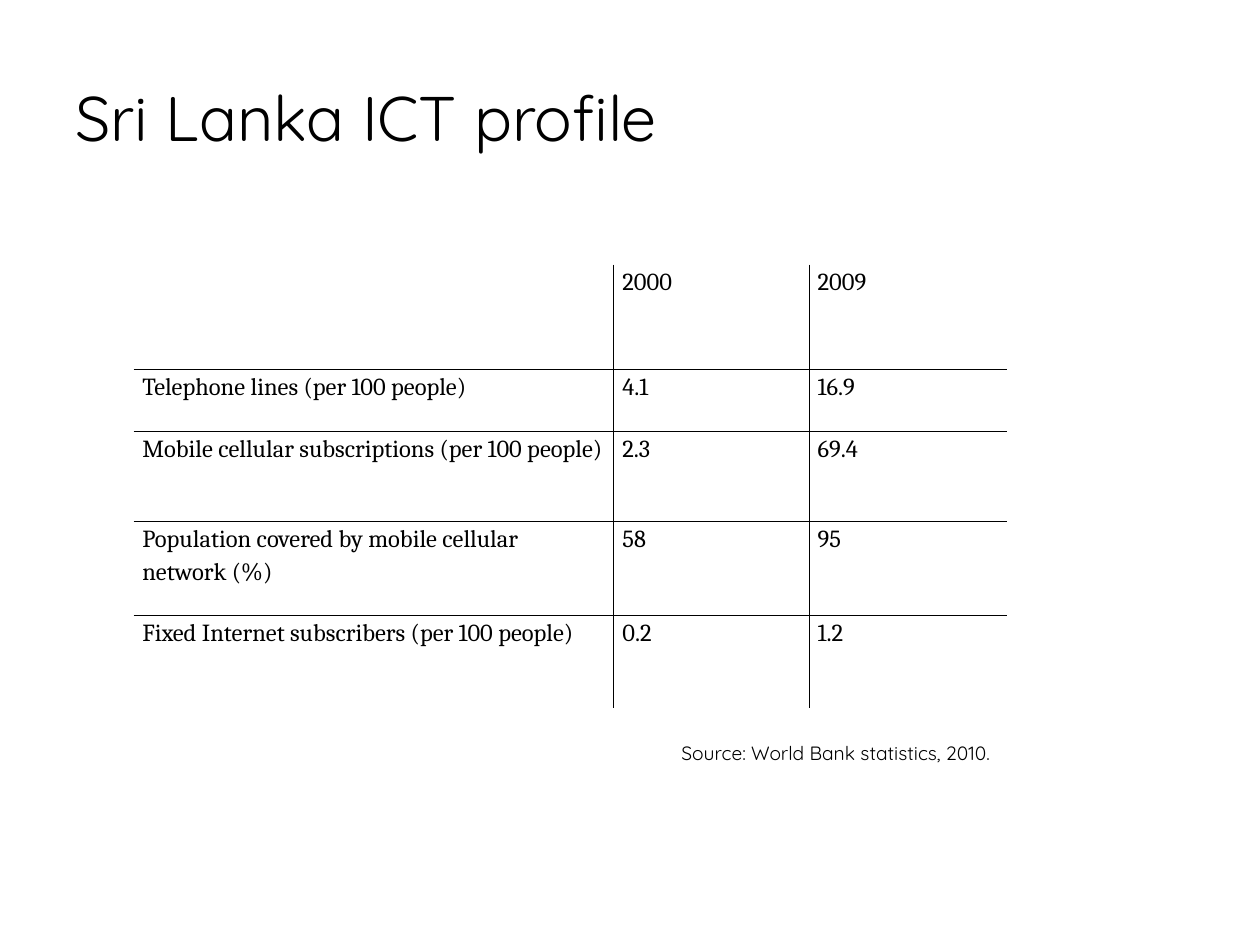
from lxml.etree import SubElement
from pptx import Presentation
from pptx.dml.color import RGBColor
from pptx.enum.text import MSO_ANCHOR
from pptx.oxml.ns import qn
from pptx.util import Inches, Pt

BLACK = RGBColor(0x00, 0x00, 0x00)

TITLE = {"name": "Quicksand", "size": Pt(36)}
SOURCE = {"name": "Quicksand", "size": Pt(11)}
CELL = {"name": "Cambria", "size": Pt(14)}

COLUMN_WIDTHS = [3.81, 1.55, 1.57]
ROW_HEIGHTS = [0.83, 0.49, 0.72, 0.74, 0.74]
ICT_ROWS = [
    ["", "2000", "2009"],
    ["Telephone lines (per 100 people)", "4.1", "16.9"],
    ["Mobile cellular subscriptions (per 100 people)", "2.3", "69.4"],
    ["Population covered by mobile cellular network (%)", "58", "95"],
    ["Fixed Internet subscribers (per 100 people)", "0.2", "1.2"],
]


class SlideBuilder:
    def __init__(self, slide, color=BLACK, border_width=Pt(0.25)):
        self.slide = slide
        self.color = color
        self.border_width = border_width

    def add_run(self, paragraph, text, style):
        run = paragraph.add_run()
        run.text = text
        run.font.color.rgb = self.color
        for name, value in style.items():
            setattr(run.font, name, value)

    def add_text(self, box, text, style, anchor=MSO_ANCHOR.TOP):
        shape = self.slide.shapes.add_textbox(*map(Inches, box))
        frame = shape.text_frame
        frame.word_wrap = True
        frame.vertical_anchor = anchor
        self.add_run(frame.paragraphs[0], text, style)

    def add_borders(self, cell, visible_sides):
        properties = cell._tc.get_or_add_tcPr()
        for side in "LRTB":
            visible = side in visible_sides
            line = SubElement(properties, qn(f"a:ln{side}"))
            line.set("w", str(int(self.border_width) if visible else 0))
            fill = SubElement(line, qn("a:solidFill" if visible else "a:noFill"))
            if visible:
                SubElement(fill, qn("a:srgbClr")).set("val", str(self.color))

    def add_table(self, left, top, rows, column_widths, row_heights, style):
        row_count, column_count = len(row_heights), len(column_widths)
        size = map(Inches, (left, top, sum(column_widths), sum(row_heights)))
        table = self.slide.shapes.add_table(row_count, column_count, *size).table
        table.first_row = table.horz_banding = False
        for column, width in zip(table.columns, column_widths):
            column.width = Inches(width)
        for row, height in zip(table.rows, row_heights):
            row.height = Inches(height)
        cell_format = {
            "margin_left": Inches(0.07),
            "margin_right": Inches(0.07),
            "margin_top": 0,
            "margin_bottom": 0,
        }
        paragraph_format = {"line_spacing": 1.15, "space_after": Pt(10)}
        for row_index, row in enumerate(rows):
            for column_index, text in enumerate(row):
                cell = table.cell(row_index, column_index)
                for name, value in cell_format.items():
                    setattr(cell, name, value)
                inner_sides = {
                    "L": column_index > 0,
                    "R": column_index < column_count - 1,
                    "T": row_index > 0,
                    "B": row_index < row_count - 1,
                }
                self.add_borders(cell, [side for side, inner in inner_sides.items() if inner])
                cell.fill.background()
                paragraph = cell.text_frame.paragraphs[0]
                for name, value in paragraph_format.items():
                    setattr(paragraph, name, value)
                if text:
                    self.add_run(paragraph, text, style)


def main():
    presentation = Presentation()
    presentation.slide_width = Inches(10)
    presentation.slide_height = Inches(7.5)
    builder = SlideBuilder(presentation.slides.add_slide(presentation.slide_layouts[6]))

    builder.add_text((0.5, 0.3, 9, 1.25), "Sri Lanka ICT profile", TITLE, MSO_ANCHOR.MIDDLE)
    builder.add_table(1.06, 2.1, ICT_ROWS, COLUMN_WIDTHS, ROW_HEIGHTS, CELL)
    builder.add_text((5.31, 5.83, 2.8, 0.29), "Source: World Bank statistics, 2010.", SOURCE)
    presentation.save("out.pptx")


if __name__ == "__main__":
    main()
